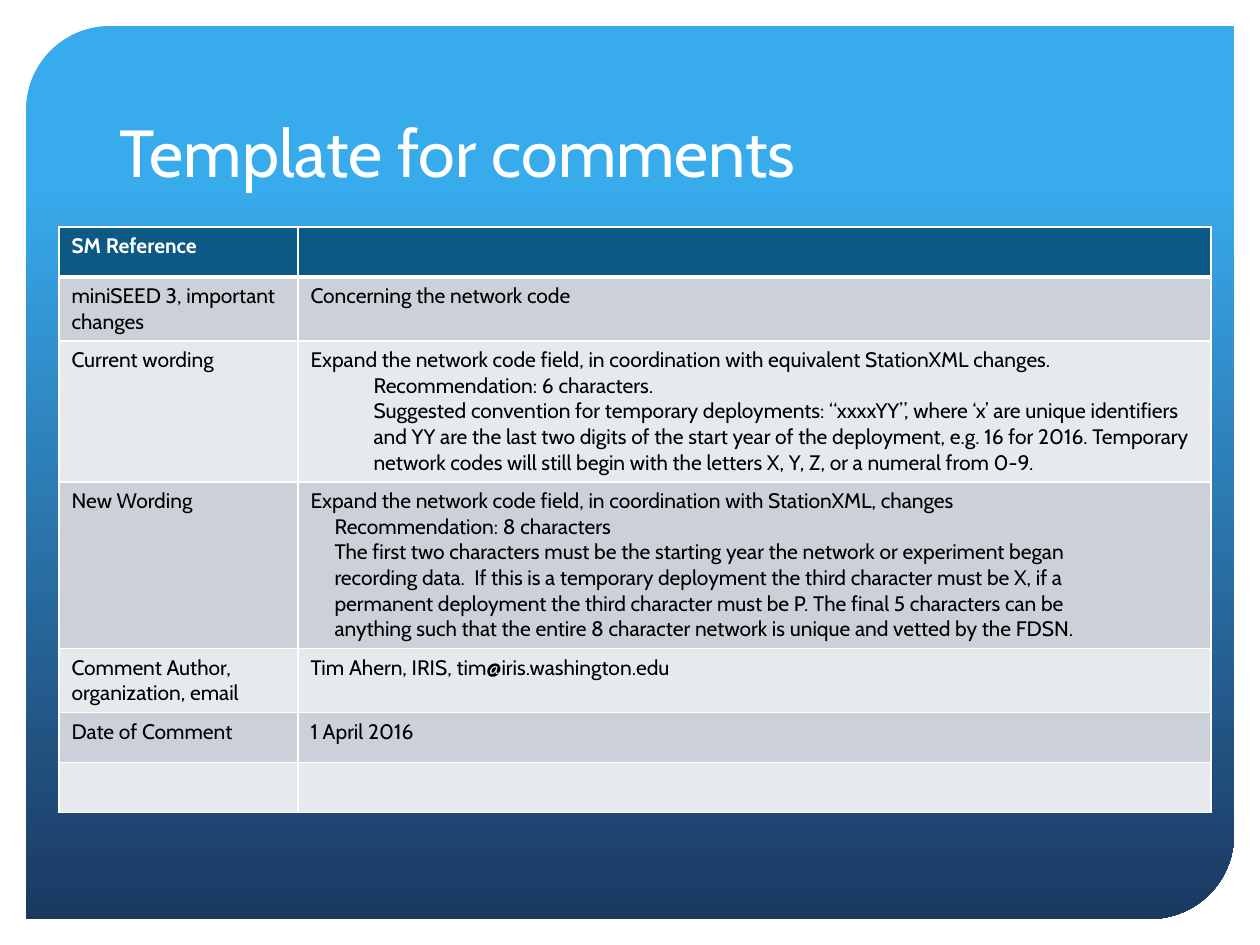
from lxml.etree import SubElement
from pptx import Presentation
from pptx.dml.color import RGBColor
from pptx.enum.shapes import MSO_SHAPE
from pptx.enum.text import MSO_ANCHOR, PP_ALIGN
from pptx.oxml.ns import qn
from pptx.util import Emu, Pt

WHITE = RGBColor(0xFF, 0xFF, 0xFF)
BLACK = RGBColor(0x00, 0x00, 0x00)
SKY = RGBColor(0x38, 0xAB, 0xED)
NAVY = RGBColor(0x1B, 0x38, 0x61)
HEADER = RGBColor(0x0C, 0x59, 0x86)
BANDS = [RGBColor(0xE7, 0xEA, 0xED), RGBColor(0xCC, 0xD1, 0xD9)]
FONT = "Cabin"


def px(length):
    return Emu(round(length * 914400 / 126))


def style_font(font, size, color, bold=False):
    font.name = FONT
    font.size = Pt(size)
    font.bold = bold
    font.color.rgb = color


deck = Presentation()
deck.slide_width, deck.slide_height = px(1260), px(945)
page = deck.slides.add_slide(deck.slide_layouts[5])

panel = page.shapes.add_shape(
    MSO_SHAPE.ROUND_2_DIAG_RECTANGLE, px(26), px(26), px(1208), px(893))
panel.adjustments[0] = 0.094
panel.adjustments[1] = 0
panel.shadow.inherit = False
panel.line.fill.background()
panel.fill.gradient()
panel.fill.gradient_angle = 270
for stop, position, color in zip(panel.fill.gradient_stops, (0.17, 1), (SKY, NAVY)):
    stop.position = position
    stop.color.rgb = color
page.shapes._spTree.insert(2, panel._element)

title = page.shapes.title
title.left, title.top, title.width, title.height = px(107), px(53), px(1043), px(144)
title.text_frame.text = "Template for comments"
title.text_frame.vertical_anchor = MSO_ANCHOR.BOTTOM
heading = title.text_frame.paragraphs[0]
heading.alignment = PP_ALIGN.LEFT
style_font(heading.font, 38, WHITE)

ROWS = [
    (50, 0, "SM Reference", []),
    (64, 0, "miniSEED 3, important changes", ["Concerning the network code"]),
    (141, 63, "Current wording", [
        "Expand the network code field, in coordination with equivalent StationXML changes.",
        "Recommendation: 6 characters.",
        "Suggested convention for temporary deployments: “xxxxYY”, where ‘x’ are unique "
        "identifiers and YY are the last two digits of the start year of the deployment, "
        "e.g. 16 for 2016. Temporary network codes will still begin with the letters "
        "X, Y, Z, or a numeral from 0-9.",
    ]),
    (166, 24, "New Wording", [
        "Expand the network code field, in coordination with StationXML, changes",
        "Recommendation: 8 characters",
        "The first two characters must be the starting year the network or experiment began",
        "recording data.  If this is a temporary deployment the third character must be X, if a",
        "permanent deployment the third character must be P. The final 5 characters can be",
        "anything such that the entire 8 character network is unique and vetted by the FDSN.",
    ]),
    (64, 0, "Comment Author, organization, email",
     ["Tim Ahern, IRIS, tim@iris.washington.edu"]),
    (50, 0, "Date of Comment", ["1 April 2016"]),
    (50, 0, "", []),
]

table_height = sum(row[0] for row in ROWS)
table = page.shapes.add_table(
    len(ROWS), 2, px(59), px(227), px(1152), px(table_height)).table
table.columns[0].width, table.columns[1].width = px(239), px(913)

for row_index, (height, indent, label, lines) in enumerate(ROWS):
    table.rows[row_index].height = px(height)
    is_header = row_index == 0
    for column_index, content in enumerate(([label], lines)):
        cell = table.cell(row_index, column_index)
        properties = cell._tc.get_or_add_tcPr()
        for side in ("lnL", "lnR", "lnT", "lnB"):
            heavy = (is_header and side == "lnB") or (row_index == 1 and side == "lnT")
            border = SubElement(properties, qn(f"a:{side}"), w=str(Pt(3 if heavy else 1)))
            border_fill = SubElement(border, qn("a:solidFill"))
            SubElement(border_fill, qn("a:srgbClr"), val=str(WHITE))
        cell.fill.solid()
        cell.fill.fore_color.rgb = HEADER if is_header else BANDS[row_index % 2]
        cell.text_frame.text = "\n".join(content)
        for para_index, para in enumerate(cell.text_frame.paragraphs):
            if para_index:
                para._p.get_or_add_pPr().set("marL", str(px(indent)))
            style_font(para.font, 12, WHITE if is_header else BLACK, is_header)

deck.save("out.pptx")
